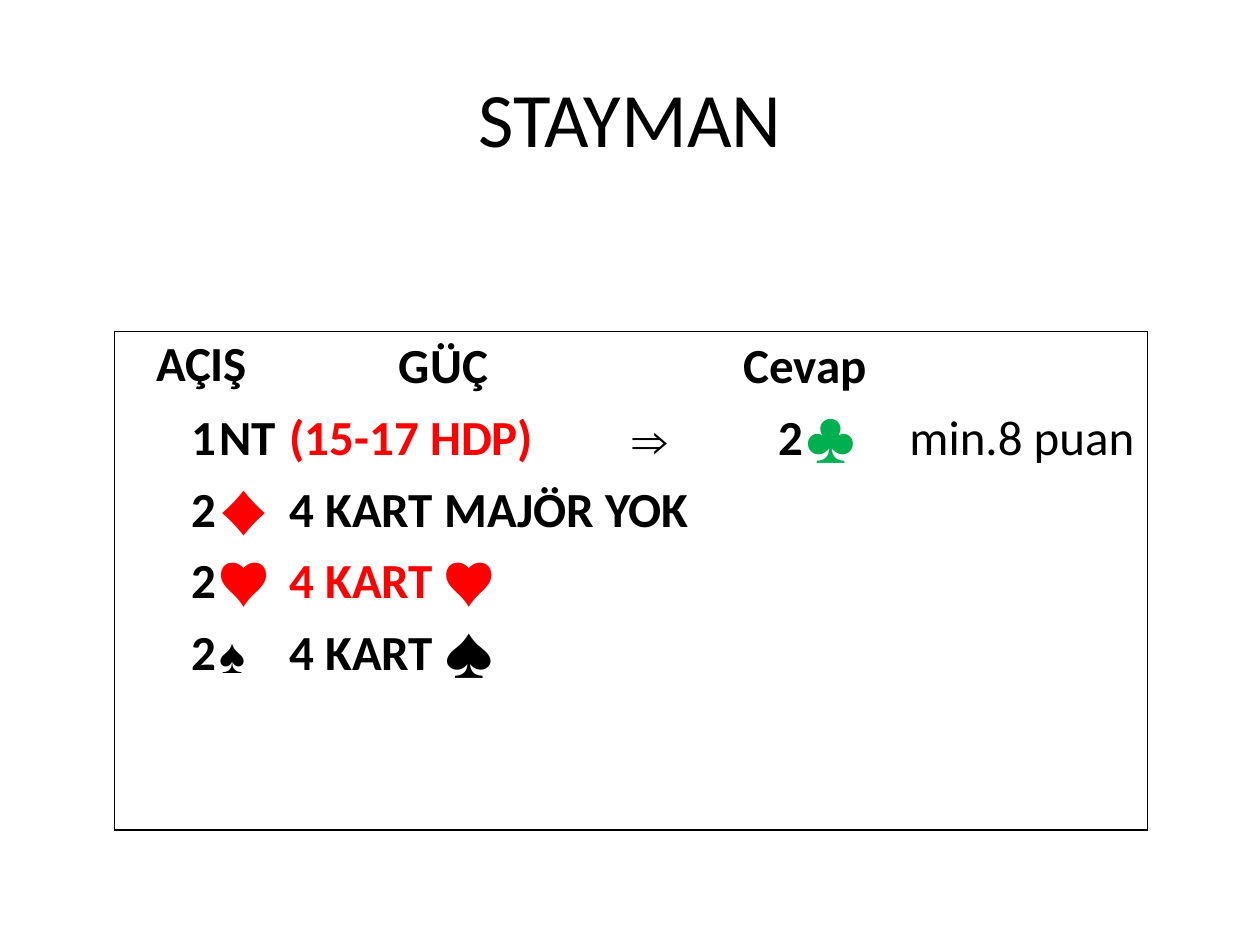
from dataclasses import dataclass

from lxml.etree import SubElement
from pptx import Presentation
from pptx.dml.color import RGBColor
from pptx.enum.text import MSO_ANCHOR, PP_ALIGN
from pptx.oxml import parse_xml
from pptx.oxml.ns import nsdecls, qn
from pptx.util import Inches, Pt

BLACK, RED, GREEN = "000000", "FF0000", "00B050"
LEFT, CENTER, RIGHT = PP_ALIGN.LEFT, PP_ALIGN.CENTER, PP_ALIGN.RIGHT
NO_STYLE = "{2D5ABB26-0587-4C30-8999-92F81FD0307C}"
COLUMNS = [0.82, 0.56, 2.46, 0.82, 0.82, 0.82, 1.9]
ROWS = [0.52] + [0.57] * 5 + [0.59]


@dataclass
class Entry:
    row: int
    column: int
    text: str
    align: PP_ALIGN = LEFT
    color: str = BLACK
    font: str = "Calibri"
    bold: bool = True
    columns: int = 1
    anchor: MSO_ANCHOR = MSO_ANCHOR.BOTTOM


ENTRIES = [
    # Headings
    Entry(0, 0, "AÇIŞ", CENTER, columns=2, anchor=MSO_ANCHOR.MIDDLE),
    Entry(0, 2, "GÜÇ", CENTER),
    Entry(0, 4, "Cevap", CENTER, columns=2),
    # Opening bid and response
    Entry(1, 0, "1", RIGHT),
    Entry(1, 1, "NT"),
    Entry(1, 2, "(15-17 HDP)", color=RED),
    Entry(1, 3, "⇒", CENTER, font="Arial"),
    Entry(1, 4, "2", RIGHT),
    Entry(1, 5, "♣", color=GREEN),
    Entry(1, 6, "min.8 puan", bold=False),
    # Opener's replies
    Entry(2, 0, "2", RIGHT),
    Entry(2, 1, "♦", color=RED),
    Entry(2, 2, "4 KART MAJÖR YOK", columns=2),
    Entry(3, 0, "2", RIGHT),
    Entry(3, 1, "♥", color=RED),
    Entry(3, 2, "4 KART ♥", color=RED),
    Entry(4, 0, "2", RIGHT),
    Entry(4, 1, "♠", font="Arial"),
    Entry(4, 2, "4 KART ♠"),
]


def style_font(font, size: float, color: str, name: str = "Calibri", bold: bool = False) -> None:
    font.size, font.name, font.bold = Pt(size), name, bold
    font.color.rgb = RGBColor.from_string(color)


def write_entry(table, entry: Entry) -> None:
    cell = table.cell(entry.row, entry.column)
    if entry.columns > 1:
        cell.merge(table.cell(entry.row, entry.column + entry.columns - 1))
    cell.text_frame.text = entry.text
    cell.vertical_anchor = entry.anchor
    cell.margin_left = cell.margin_right = cell.margin_top = Inches(0.01)
    cell.margin_bottom = 0
    para = cell.text_frame.paragraphs[0]
    para.alignment = entry.align
    style_font(para.runs[0].font, 28, entry.color, entry.font, entry.bold)


def draw_frame(table) -> None:
    """Clear every cell fill and draw lines on the outer edges only."""
    last_row, last_column = len(ROWS) - 1, len(COLUMNS) - 1
    for row in range(len(ROWS)):
        for column in range(len(COLUMNS)):
            cell = table.cell(row, column)
            cell.fill.background()
            properties = cell._tc.get_or_add_tcPr()
            edges = {"lnL": column == 0, "lnR": column == last_column,
                     "lnT": row == 0, "lnB": row == last_row}
            sides = [side for side, outer in edges.items() if outer]
            for index, side in enumerate(sides):
                line = parse_xml(f'<a:{side} {nsdecls("a")} w="{Pt(1)}"/>')
                fill = SubElement(line, qn("a:solidFill"))
                SubElement(fill, qn("a:srgbClr"), val=BLACK)
                properties.insert(index, line)


def main() -> None:
    deck = Presentation()
    deck.slide_width, deck.slide_height = Inches(10), Inches(7.5)
    page = deck.slides.add_slide(deck.slide_layouts[5])

    # Title
    title = page.shapes.title
    title.left, title.top = Inches(0.5), Inches(0.3)
    title.width, title.height = Inches(9), Inches(1.25)
    title.text_frame.text = "STAYMAN"
    title.text_frame.vertical_anchor = MSO_ANCHOR.MIDDLE
    para = title.text_frame.paragraphs[0]
    para.alignment = CENTER
    style_font(para.runs[0].font, 44, BLACK)

    # Bidding table
    frame = page.shapes.add_table(len(ROWS), len(COLUMNS), Inches(0.91), Inches(2.63),
                                  Inches(sum(COLUMNS)), Inches(sum(ROWS)))
    table = frame.table
    table.first_row = table.horz_banding = False
    table._tbl.tblPr.find(qn("a:tableStyleId")).text = NO_STYLE
    for column, width in zip(table.columns, COLUMNS):
        column.width = Inches(width)
    for row, height in zip(table.rows, ROWS):
        row.height = Inches(height)
    for entry in ENTRIES:
        write_entry(table, entry)
    draw_frame(table)

    deck.save("out.pptx")


if __name__ == "__main__":
    main()
